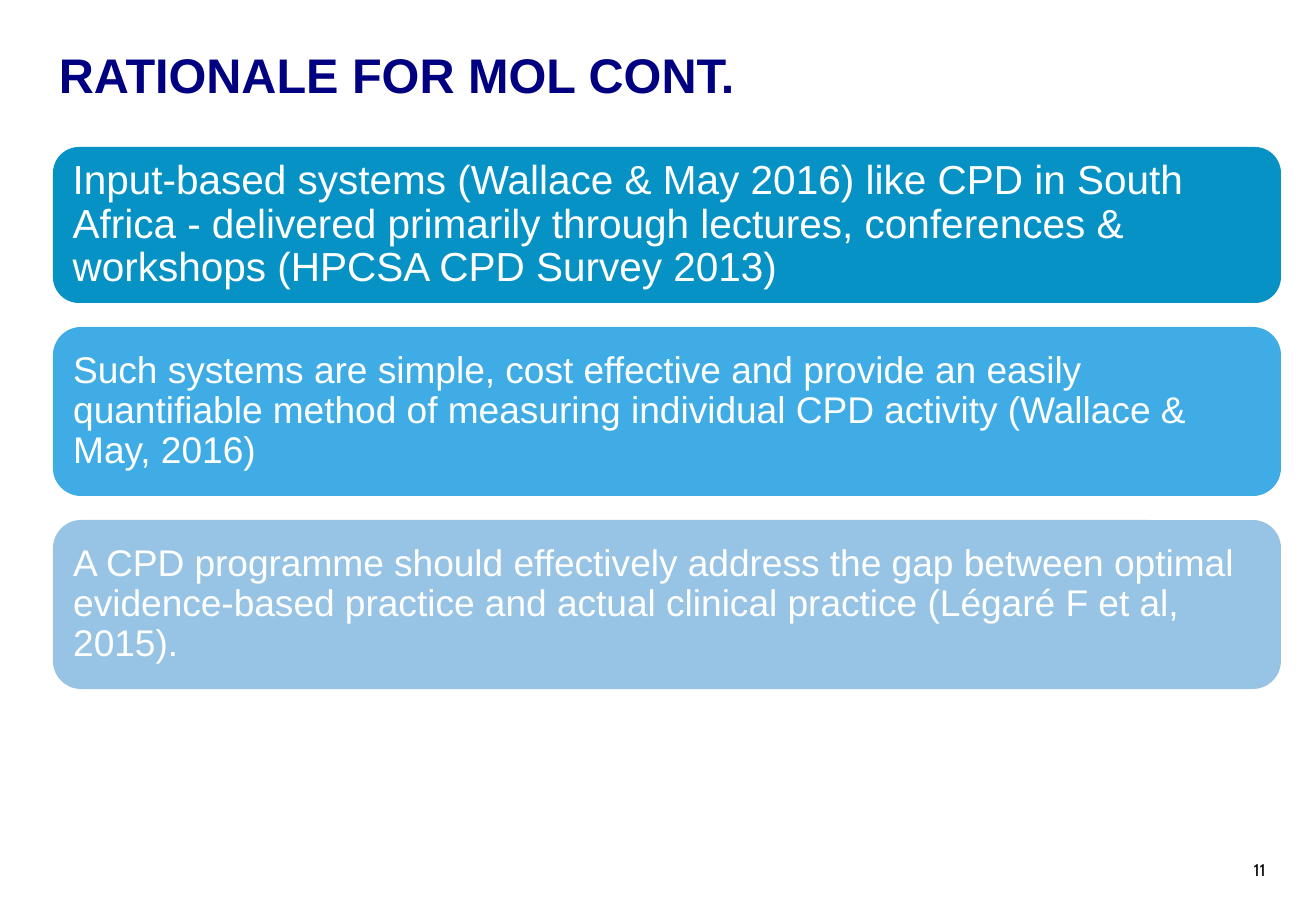
from pptx import Presentation
from pptx.dml.color import RGBColor
from pptx.enum import shapes, text
from pptx import util as u

NAVY = RGBColor(0x00, 0x00, 0x80)
BLACK = RGBColor(0x00, 0x00, 0x00)
WHITE = RGBColor(0xFF, 0xFF, 0xFF)
DEEP_BLUE = RGBColor(0x07, 0x92, 0xC5)
BRIGHT_BLUE = RGBColor(0x3F, 0xAC, 0xE5)
PALE_BLUE = RGBColor(0x97, 0xC4, 0xE5)

TITLE = "RATIONALE FOR MOL CONT."
PAGE_NUMBER = "11"
# text, fill, height in px, text size in points
PANELS = [
    ("Input-based systems (Wallace & May 2016) like CPD in South Africa - delivered "
     "primarily through lectures, conferences & workshops (HPCSA CPD Survey 2013)",
     DEEP_BLUE, 156, 24),
    ("Such systems are simple, cost effective and provide an easily quantifiable "
     "method of measuring individual CPD activity (Wallace & May, 2016)",
     BRIGHT_BLUE, 169, 22),
    ("A CPD programme should effectively address the gap between optimal "
     "evidence-based practice and actual clinical practice (Légaré F et al, 2015).",
     PALE_BLUE, 169, 22),
]
PANEL_LEFT, PANEL_TOP, PANEL_WIDTH, PANEL_GAP = 53, 147, 1228, 24
PANEL_MARGIN = 12


def px(length):
    return u.Emu(round(length * 914400 / 121.5))


def write(shape, words, size, color, anchor, font="Arial", bold=False):
    frame = shape.text_frame
    frame.word_wrap = True
    frame.vertical_anchor = anchor
    paragraph = frame.paragraphs[0]
    paragraph.alignment = text.PP_ALIGN.LEFT
    run = paragraph.add_run()
    run.text = words
    run.font.name = font
    run.font.size = u.Pt(size)
    run.font.bold = bold
    run.font.color.rgb = color
    return frame


def add_plain_shape(slide, kind, left, top, width, height, fill=None):
    shape = slide.shapes.add_shape(kind, px(left), px(top), px(width), px(height))
    shape.shadow.inherit = False
    shape.line.fill.background()
    if fill is None:
        shape.fill.background()
    else:
        shape.fill.solid()
        shape.fill.fore_color.rgb = fill
    return shape


def main():
    presentation = Presentation()
    presentation.slide_width, presentation.slide_height = px(1316), px(911)
    slide = presentation.slides.add_slide(presentation.slide_layouts[6])

    title = slide.shapes.add_textbox(px(47), px(36), px(1083), px(73))
    write(title, TITLE, 28.8, NAVY, text.MSO_ANCHOR.BOTTOM, bold=True)

    number = add_plain_shape(slide, shapes.MSO_SHAPE.OVAL, 1231, 844, 73, 67)
    write(number, PAGE_NUMBER, 10, BLACK, text.MSO_ANCHOR.TOP, font="Cabin")

    top = PANEL_TOP
    for words, fill, height, size in PANELS:
        panel = add_plain_shape(slide, shapes.MSO_SHAPE.ROUNDED_RECTANGLE,
                                PANEL_LEFT, top, PANEL_WIDTH, height, fill)
        frame = write(panel, words, size, WHITE, text.MSO_ANCHOR.MIDDLE)
        frame.margin_left = frame.margin_right = px(PANEL_MARGIN)
        frame.paragraphs[0].line_spacing = 0.9
        top += height + PANEL_GAP

    presentation.save("out.pptx")


if __name__ == "__main__":
    main()
